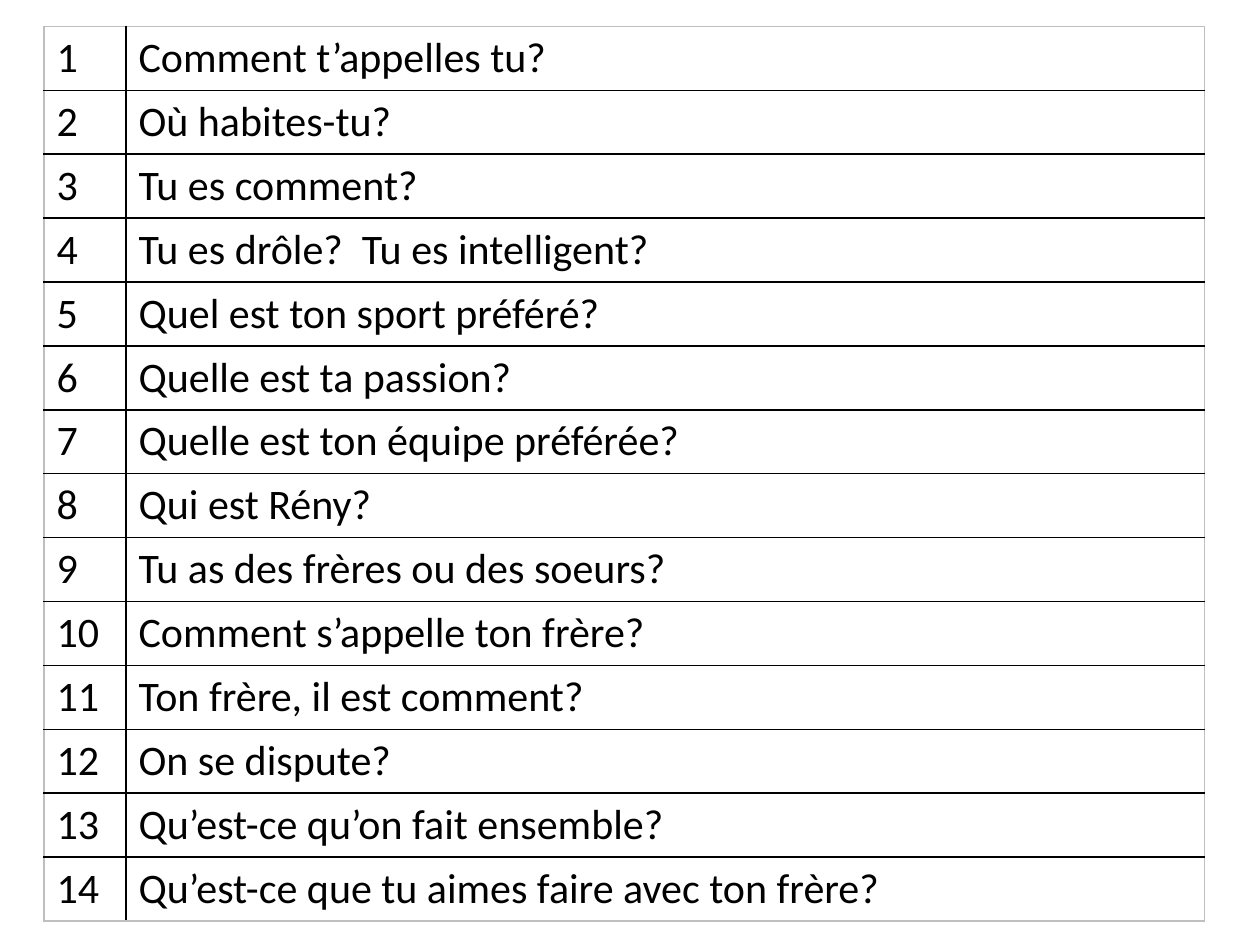
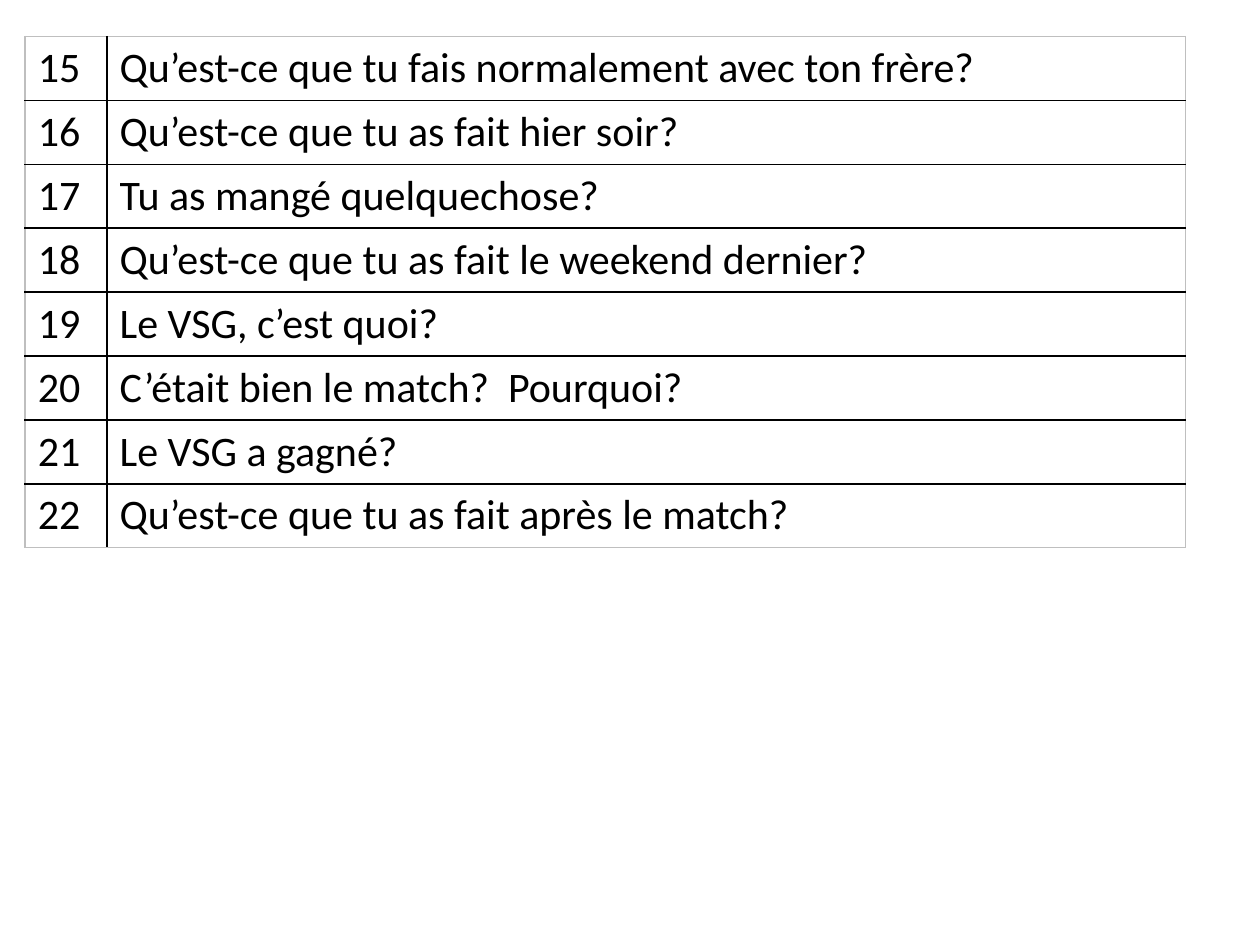
from dataclasses import dataclass

from lxml import etree
from pptx import Presentation
from pptx import util as u
from pptx.dml import color
from pptx.oxml import ns


@dataclass(frozen=True)
class Theme:
    ink: str = "000000"
    frame: str = "BFBFBF"
    font: str = "Calibri"
    text_size: int = 24
    line_width: float = 1


theme = Theme()

# Grid shared by both question tables, in inches
SLIDE_SIZE = (10, 7.5)
COLUMNS = (0.65, 8.56)
ROW = 0.5

# Each page: left and top of the table, then its questions
pages = [
    ((0.35, 0.21), [
        "Comment t’appelles tu?",
        "Où habites-tu?",
        "Tu es comment?",
        "Tu es drôle?  Tu es intelligent?",
        "Quel est ton sport préféré?",
        "Quelle est ta passion?",
        "Quelle est ton équipe préférée?",
        "Qui est Rény?",
        "Tu as des frères ou des soeurs?",
        "Comment s’appelle ton frère?",
        "Ton frère, il est comment?",
        "On se dispute?",
        "Qu’est-ce qu’on fait ensemble?",
        "Qu’est-ce que tu aimes faire avec ton frère?",
    ]),
    ((0.2, 0.29), [
        "Qu’est-ce que tu fais normalement avec ton frère?",
        "Qu’est-ce que tu as fait hier soir?",
        "Tu as mangé quelquechose?",
        "Qu’est-ce que tu as fait le weekend dernier?",
        "Le VSG, c’est quoi?",
        "C’était bien le match?  Pourquoi?",
        "Le VSG a gagné?",
        "Qu’est-ce que tu as fait après le match?",
    ]),
]


def add_border(cell, side, rgb):
    """Draw one side (L, R, T or B) of a cell as a solid line."""
    properties = cell._tc.get_or_add_tcPr()
    line = etree.SubElement(properties, ns.qn(f"a:ln{side}"),
                            w=str(u.Pt(theme.line_width)))
    fill = etree.SubElement(line, ns.qn("a:solidFill"))
    etree.SubElement(fill, ns.qn("a:srgbClr"), val=rgb)


def fill_cell(cell, content, outer_sides):
    """Write a cell's text; sides on the table's edge take the frame colour."""
    cell.text_frame.text = content
    font = cell.text_frame.paragraphs[0].runs[0].font
    font.name = theme.font
    font.size = u.Pt(theme.text_size)
    font.color.rgb = color.RGBColor.from_string(theme.ink)
    for side in "LRTB":
        add_border(cell, side, theme.frame if side in outer_sides else theme.ink)
    cell.fill.background()


deck = Presentation()
deck.slide_width, deck.slide_height = map(u.Inches, SLIDE_SIZE)
blank_layout = deck.slide_layouts[6]

# One numbered question table per page, numbering runs on
number = 0
for (left, top), questions in pages:
    page = deck.slides.add_slide(blank_layout)
    frame = page.shapes.add_table(
        len(questions), len(COLUMNS), u.Inches(left), u.Inches(top),
        u.Inches(sum(COLUMNS)), u.Inches(ROW * len(questions)))
    table = frame.table
    table.first_row = table.horz_banding = False
    for column, width in zip(table.columns, COLUMNS):
        column.width = u.Inches(width)

    for row, question in enumerate(questions):
        number += 1
        edges = ("T" if row == 0 else "") + ("B" if row == len(questions) - 1 else "")
        fill_cell(table.cell(row, 0), str(number), edges + "L")
        fill_cell(table.cell(row, 1), question, edges + "R")

deck.save("out.pptx")
